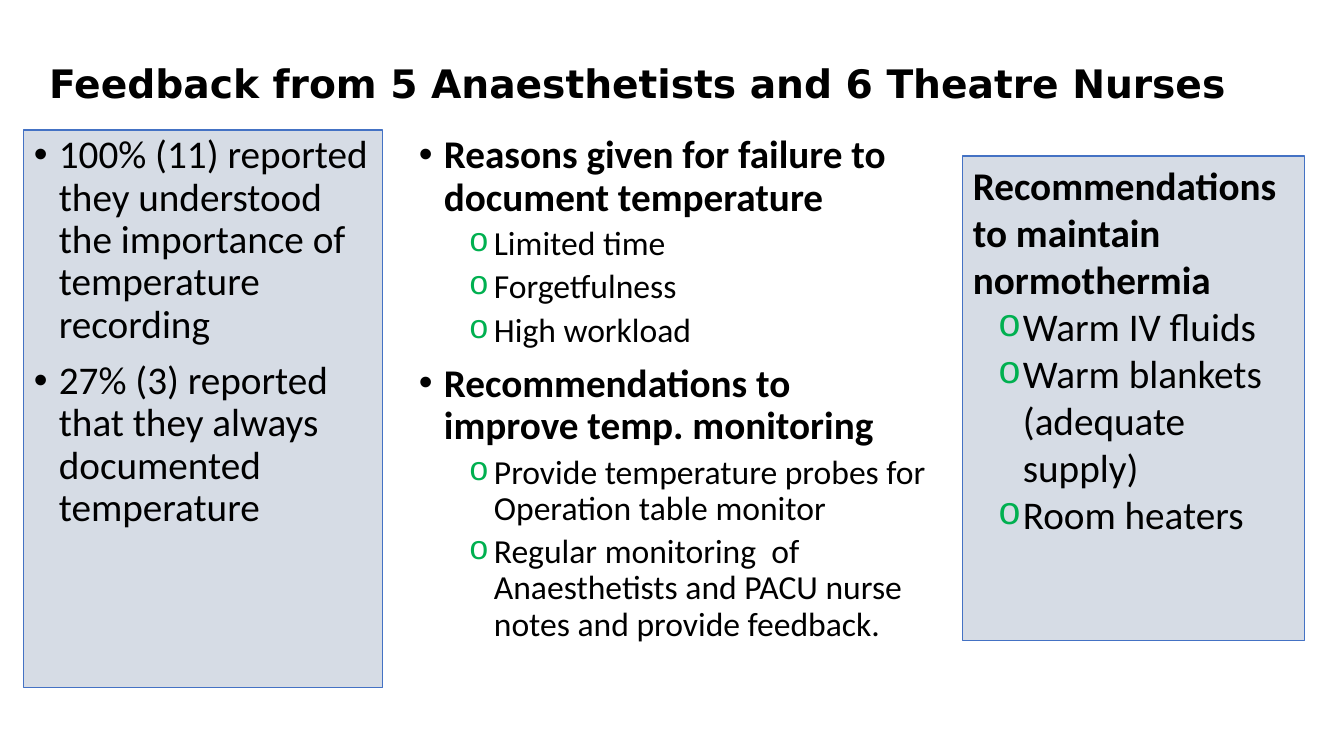
"""Build the slide on feedback from anaesthetists and theatre nurses."""
from lxml import etree
from pptx import Presentation
from pptx.dml.color import RGBColor
from pptx.enum.shapes import MSO_SHAPE
from pptx.enum.text import MSO_ANCHOR, MSO_AUTO_SIZE, PP_ALIGN
from pptx.oxml.ns import qn
from pptx.util import Emu, Pt

RECTANGLE = MSO_SHAPE.RECTANGLE
TOP, MIDDLE = MSO_ANCHOR.TOP, MSO_ANCHOR.MIDDLE
NO_AUTOFIT = MSO_AUTO_SIZE.NONE
LEFT = PP_ALIGN.LEFT
BLACK = RGBColor(0x00, 0x00, 0x00)
PANEL_FILL = RGBColor(0xD6, 0xDC, 0xE5)
PANEL_LINE = RGBColor(0x44, 0x72, 0xC4)
GREEN = RGBColor(0x00, 0xB0, 0x50)
EMU_PER_PX = 914400 / 100.8
HANGING = 25


def px(length):
    return Emu(round(length * EMU_PER_PX))


def add_bullet(paragraph, character, font_name, margin, color):
    properties = paragraph._p.get_or_add_pPr()
    properties.set("marL", str(px(margin)))
    properties.set("indent", str(-px(HANGING)))
    bullet_color = etree.SubElement(properties, qn("a:buClr"))
    etree.SubElement(bullet_color, qn("a:srgbClr"), val=str(color))
    etree.SubElement(properties, qn("a:buFont"), typeface=font_name)
    etree.SubElement(properties, qn("a:buChar"), char=character)


HEADING, POINT, SUBPOINT = "heading", "point", "subpoint"
COLUMNS = [
    {"box": (24, 130, 359, 558), "panel": True, "spacing": 0.9,
     "subpoint_margin": 75, "subpoint_size": 24, "items": [
         (POINT, "100% (11) reported they understood the importance of temperature recording"),
         (POINT, "27% (3) reported that they always documented temperature")]},
    {"box": (409, 130, 528, 558), "panel": False, "spacing": 0.9,
     "subpoint_margin": 75, "subpoint_size": 24, "items": [
         (HEADING, "Reasons given for failure to document temperature"),
         (SUBPOINT, "Limited time"),
         (SUBPOINT, "Forgetfulness"),
         (SUBPOINT, "High workload"),
         (HEADING, "Recommendations to improve temp. monitoring"),
         (SUBPOINT, "Provide temperature probes for Operation table monitor"),
         (SUBPOINT, "Regular monitoring  of Anaesthetists and PACU nurse notes and provide feedback.")]},
    {"box": (963, 156, 342, 485), "panel": True, "spacing": 1.0,
     "subpoint_margin": 50, "subpoint_size": 28, "items": [
         (HEADING, "Recommendations to maintain normothermia"),
         (SUBPOINT, "Warm IV fluids"),
         (SUBPOINT, "Warm blankets (adequate supply)"),
         (SUBPOINT, "Room heaters")]},
]

presentation = Presentation()
presentation.slide_width = px(1344)
presentation.slide_height = px(756)
slide = presentation.slides.add_slide(presentation.slide_layouts[5])

title = slide.shapes.title
title.left, title.top, title.width, title.height = map(px, (39, 40, 1213, 91))
title.text_frame.auto_size = NO_AUTOFIT
title.text_frame.word_wrap = True
title.text_frame.vertical_anchor = MIDDLE
paragraph = title.text_frame.paragraphs[0]
paragraph.alignment = LEFT
paragraph.line_spacing = 0.9
run = paragraph.add_run()
run.text = "Feedback from 5 Anaesthetists and 6 Theatre Nurses"
run.font.name = "DejaVu Sans"
run.font.size = Pt(28)
run.font.bold = True
run.font.color.rgb = BLACK

for column in COLUMNS:
    box = map(px, column["box"])
    if column["panel"]:
        shape = slide.shapes.add_shape(RECTANGLE, *box)
        shape.shadow.inherit = False
        shape.fill.solid()
        shape.fill.fore_color.rgb = PANEL_FILL
        shape.line.color.rgb = PANEL_LINE
        shape.line.width = Pt(0.75)
    else:
        shape = slide.shapes.add_textbox(*box)
    frame = shape.text_frame
    frame.word_wrap = True
    frame.auto_size = NO_AUTOFIT
    frame.vertical_anchor = TOP
    spaced = column["spacing"] < 1
    for index, (kind, text) in enumerate(column["items"]):
        paragraph = frame.paragraphs[0] if index == 0 else frame.add_paragraph()
        if kind == SUBPOINT:
            paragraph.level = 1
            add_bullet(paragraph, "o", "Courier New", column["subpoint_margin"], GREEN)
        elif spaced:
            add_bullet(paragraph, "•", "Arial", HANGING, BLACK)
        paragraph.alignment = LEFT
        paragraph.line_spacing = column["spacing"]
        if spaced and index > 0:
            paragraph.space_before = Pt(5 if kind == SUBPOINT else 10)
        run = paragraph.add_run()
        run.text = text
        run.font.name = "Calibri"
        run.font.size = Pt(column["subpoint_size"] if kind == SUBPOINT else 28)
        run.font.bold = kind == HEADING
        run.font.color.rgb = BLACK

presentation.save("out.pptx")
